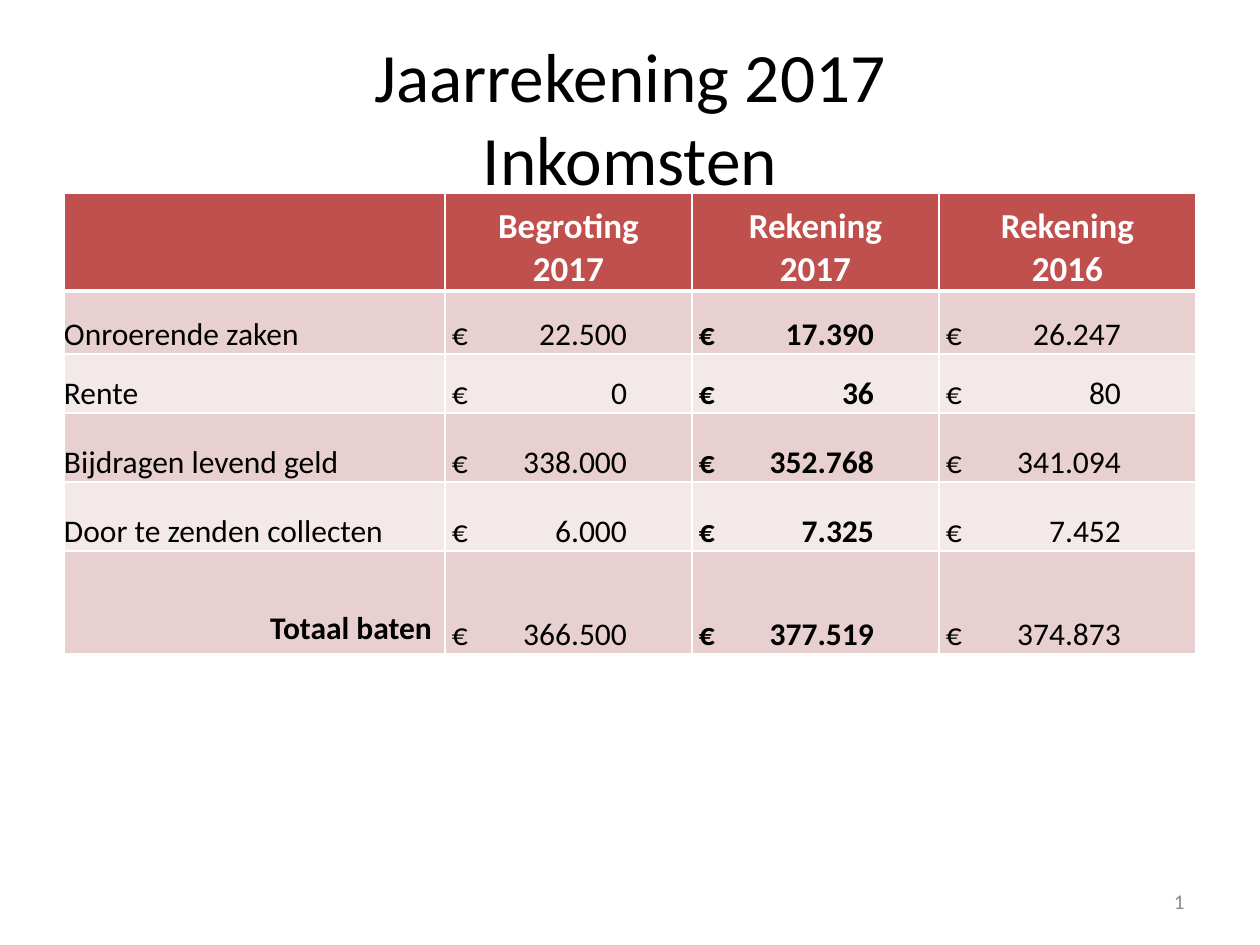
"""Builds the slide with the 2017 income table of the annual accounts."""
from dataclasses import dataclass, field

from lxml import etree
from pptx import Presentation
from pptx import util as u
from pptx.dml import color
from pptx.enum import text
from pptx.oxml import ns

SCALE = 914400 / 126
HUES = {"ink": "000000", "white": "FFFFFF", "head": "C0504D",
        "dark": "E8D0D0", "light": "F4E9E9", "grey": "8C8C8C"}
SIDES = ("L", "R", "T", "B")
LEFT, MID, RIGHT = text.PP_ALIGN.LEFT, text.PP_ALIGN.CENTER, text.PP_ALIGN.RIGHT


@dataclass
class Style:
    size: float
    hue: str = "ink"
    bold: bool = False
    align: text.PP_ALIGN = LEFT
    tab: int = 0


@dataclass
class Label:
    words: str
    box: tuple[int, int, int, int]
    style: Style


@dataclass
class Entry:
    words: str
    fill: str
    style: Style
    pads: tuple[int, int, int, int] = field(default=(0, 0, 0, 0))
    rule: int = 1


LABELS = (
    Label("Jaarrekening 2017\vInkomsten", (63, 38, 1134, 157), Style(39.6, align=MID)),
    Label("1", (903, 876, 294, 50), Style(12, "grey", align=RIGHT)),
)
COLS = (381, 247, 247, 257)
ROWS = (98, 63, 59, 69, 69, 103)
HEADS = ("", "Begroting\n2017", "Rekening\n2017", "Rekening\n2016")
ITEMS = (
    ("Onroerende zaken", "22.500", "17.390", "26.247"),
    ("Rente", "0", "36", "80"),
    ("Bijdragen levend geld", "338.000", "352.768", "341.094"),
    ("Door te zenden collecten", "6.000", "7.325", "7.452"),
    ("Totaal baten", "366.500", "377.519", "374.873"),
)


def px(count: int) -> u.Emu:
    """Turn px into EMU."""
    return u.Emu(round(count * SCALE))


def apply(thing: object, values: dict) -> None:
    """Set each named value on the thing."""
    for name, value in values.items():
        setattr(thing, name, value)


def write(frame, words: str, style: Style) -> None:
    """Fill a text frame with styled paragraphs."""
    frame.text = words
    for para in frame.paragraphs:
        para.alignment = style.align
        if style.tab:
            tabs = etree.SubElement(para._p.get_or_add_pPr(), ns.qn("a:tabLst"))
            etree.SubElement(tabs, ns.qn("a:tab"), pos=str(px(style.tab)), algn="r")
        for run in para.runs:
            apply(run.font, {"name": "Calibri", "size": u.Pt(style.size), "bold": style.bold})
            run.font.color.rgb = color.RGBColor.from_string(HUES[style.hue])


def draw_label(slide, label: Label) -> None:
    """Add a text box."""
    frame = slide.shapes.add_textbox(*map(px, label.box)).text_frame
    apply(frame, {"word_wrap": True, "vertical_anchor": text.MSO_ANCHOR.MIDDLE})
    write(frame, label.words, label.style)


def draw_cell(cell, entry: Entry) -> None:
    """Write, border and fill one table cell."""
    left, top, right, base = map(px, entry.pads)
    apply(cell, {"margin_left": left, "margin_top": top, "margin_right": right,
                 "margin_bottom": base, "vertical_anchor": text.MSO_ANCHOR.BOTTOM})
    write(cell.text_frame, entry.words, entry.style)
    props = cell._tc.get_or_add_tcPr()
    for side in SIDES:
        width = u.Pt(entry.rule if side == "B" else 1)
        line = etree.SubElement(props, ns.qn(f"a:ln{side}"), w=str(width))
        solid = etree.SubElement(line, ns.qn("a:solidFill"))
        etree.SubElement(solid, ns.qn("a:srgbClr"), val=HUES["white"])
    cell.fill.solid()
    cell.fill.fore_color.rgb = color.RGBColor.from_string(HUES[entry.fill])


def make_row(index: int, item: tuple[str, ...]) -> list[Entry]:
    """Describe one row of amounts, the last one being the total."""
    fill = "light" if index % 2 else "dark"
    if index == len(ITEMS) - 1:
        first = Entry(item[0], fill, Style(18, bold=True, align=RIGHT), (13, 6, 13, 6))
    else:
        first = Entry(item[0], fill, Style(18))
    sums = [Entry(f"€\t{value}", fill, Style(18, bold=col == 1, tab=175), (7, 0, 0, 0))
            for col, value in enumerate(item[1:])]
    return [first, *sums]


def draw_table(slide) -> None:
    """Add the income table."""
    box = map(px, (64, 193, sum(COLS), sum(ROWS)))
    table = slide.shapes.add_table(len(ROWS), len(COLS), *box).table
    apply(table, {"first_row": True, "horz_banding": False})
    for col, width in zip(table.columns, COLS):
        col.width = px(width)
    for row, height in zip(table.rows, ROWS):
        row.height = px(height)
    heads = [Entry(words, "head", Style(20, "white", True, MID), rule=3) for words in HEADS]
    grid = [heads, *(make_row(index, item) for index, item in enumerate(ITEMS))]
    for row, entries in zip(table.rows, grid):
        for cell, entry in zip(row.cells, entries):
            draw_cell(cell, entry)


def main() -> None:
    """Build and save the slide."""
    deck = Presentation()
    apply(deck, {"slide_width": px(1260), "slide_height": px(945)})
    slide = deck.slides.add_slide(deck.slide_layouts[6])
    for label in LABELS:
        draw_label(slide, label)
    draw_table(slide)
    deck.save("out.pptx")


if __name__ == "__main__":
    main()
